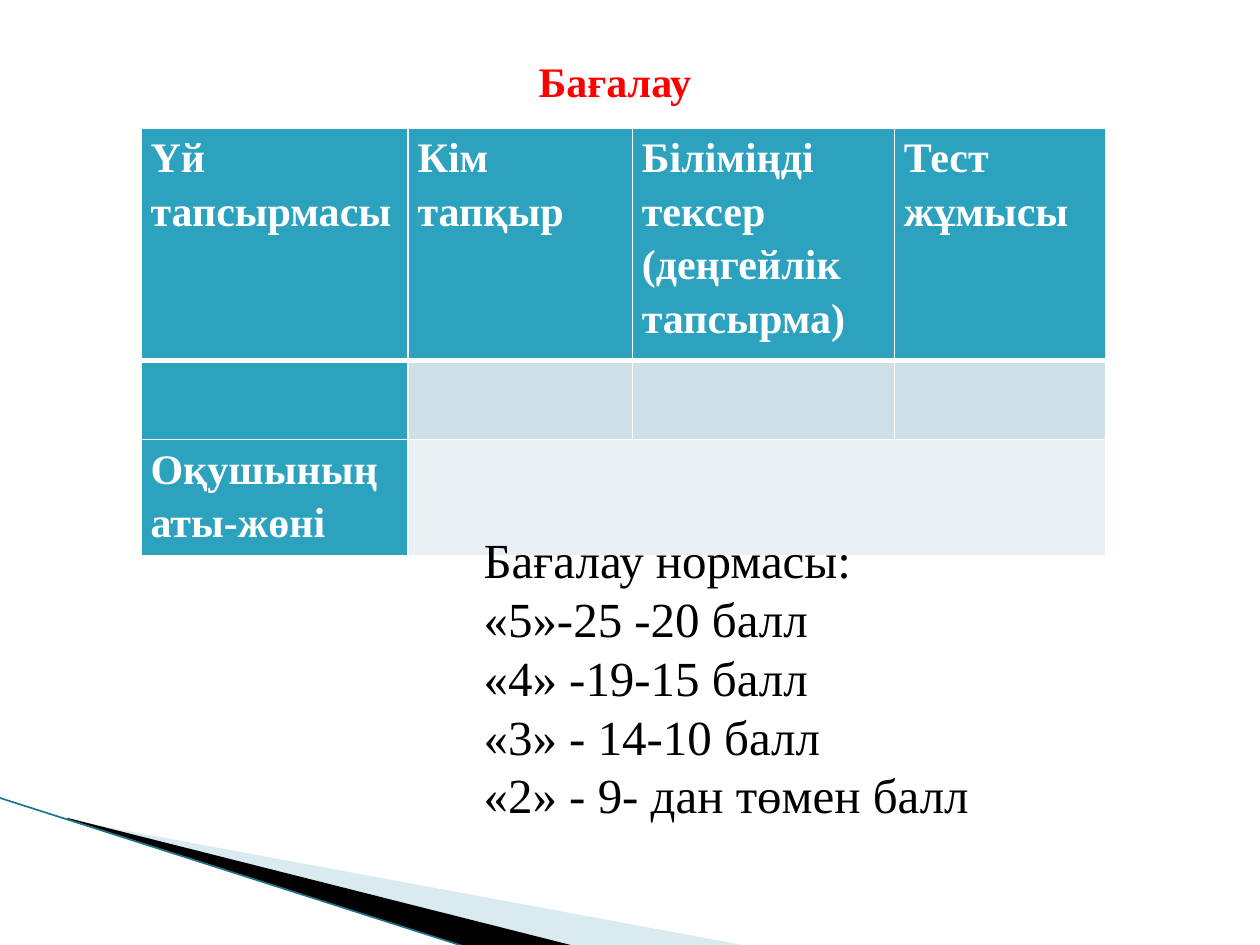
from lxml.etree import SubElement
from pptx import Presentation
from pptx.dml.color import RGBColor
from pptx.enum.shapes import MSO_CONNECTOR
from pptx.enum.text import MSO_ANCHOR, MSO_AUTO_SIZE, PP_ALIGN
from pptx.oxml.ns import qn
from pptx.util import Inches, Pt

# The slide is a grid of 10 columns by 7.5 rows; boxes are (left, top, width, height).
COLUMNS, ROWS = 10, 7.5
CELL = Inches(1)
FONT = "Times New Roman"
COLORS = {
    "title": "FF0000", "text": "000000", "white": "FFFFFF",
    "accent": "2DA2BF", "band": "CDE0E8", "pale": "E8F0F4",
    "wing": "A0CBDC", "wedge": "000000", "edge": "1F7389",
}
HEADERS = ["Үй тапсырмасы", "Кім тапқыр",
           "Біліміңді тексер (деңгейлік тапсырма)", "Тест жұмысы"]
NORMS = ["Бағалау нормасы:", "«5»-25 -20 балл", "«4» -19-15 балл",
         "«3» - 14-10 балл", "«2» - 9- дан төмен балл"]


def grid(*lengths):
    return [round(length * CELL) for length in lengths]


def color(name):
    return RGBColor.from_string(COLORS[name])


def write(frame, lines, size=24, ink="text", bold=False, align=None, spacing=None):
    for index, line in enumerate(lines):
        para = frame.add_paragraph() if index else frame.paragraphs[0]
        para.alignment, para.line_spacing = align, spacing
        span = para.add_run()
        span.text = line
        span.font.name, span.font.size, span.font.bold = FONT, Pt(size), bold
        span.font.color.rgb = color(ink)


def add_text(page, box, lines, wrap=True, **style):
    frame = page.shapes.add_textbox(*grid(*box)).text_frame
    frame.word_wrap = wrap
    frame.vertical_anchor = MSO_ANCHOR.MIDDLE
    frame.auto_size = MSO_AUTO_SIZE.SHAPE_TO_FIT_TEXT
    write(frame, lines, **style)


def set_frame(shape, box):
    """Give a freeform the frame of the box while its outline stays in place."""
    left, top, width, height = grid(*box)
    outline = shape._element.find(".//" + qn("a:path"))
    for point in outline.iter(qn("a:pt")):
        point.set("x", str(int(point.get("x")) + shape.left - left))
        point.set("y", str(int(point.get("y")) + shape.top - top))
    outline.set("w", str(width))
    outline.set("h", str(height))
    shape.left, shape.top, shape.width, shape.height = left, top, width, height


def add_wing(page, box, points, fill, opacity=100):
    builder = page.shapes.build_freeform(*grid(*points[0]), scale=1.0)
    builder.add_line_segments([grid(*point) for point in points[1:]], close=True)
    shape = builder.convert_to_shape()
    set_frame(shape, box)
    shape.shadow.inherit = False
    shape.line.fill.background()
    shape.fill.solid()
    shape.fill.fore_color.rgb = color(fill)
    if opacity < 100:
        tint = shape.fill._xPr.find(".//" + qn("a:srgbClr"))
        SubElement(tint, qn("a:alpha"), val=str(opacity * 1000))


def add_corner(page, box):
    """Draw the wings that sweep from the left edge to the bottom of the box."""
    left, top, _, height = box
    bottom = top + height
    add_wing(page, (left + 0.78, top - 0.86, 4.16, 1.58),
             [(left + 0.55, top + 0.18), (left + 5.95, bottom + 0.01),
              (left + 4.56, bottom + 0.01), (left + 0.55, top + 0.17)], "wing", 40)
    add_wing(page, (left - 0.06, top, 4.16, 0.92),
             [(left + 0.53, top + 0.16), (left + 4.57, bottom + 0.01),
              (left + 3.72, bottom + 0.02), (left + 0.54, top + 0.17)], "wedge")
    edge = page.shapes.add_connector(
        MSO_CONNECTOR.STRAIGHT, *grid(left - 0.01, top, left + 3.71, bottom + 0.02))
    edge.line.color.rgb = color("edge")
    edge.line.width = Pt(0.95)
    SubElement(edge._element.spPr, qn("a:effectLst"))


def set_borders(cell, top, bottom):
    props = cell._tc.get_or_add_tcPr()
    for tag, width in (("lnL", 1), ("lnR", 1), ("lnT", top), ("lnB", bottom)):
        line = SubElement(props, qn("a:" + tag), w=str(Pt(width)))
        fill = SubElement(line, qn("a:solidFill"))
        SubElement(fill, qn("a:srgbClr"), val=COLORS["white"])


def add_score_table(page, box, widths, heights):
    rows = [HEADERS, [""] * len(widths), ["Оқушының аты-жөні", "", "", ""]]
    table = page.shapes.add_table(len(heights), len(widths), *grid(*box)).table
    for column, width in zip(table.columns, grid(*widths)):
        column.width = width
    for row, height in zip(table.rows, grid(*heights)):
        row.height = height
    for r, (texts, body) in enumerate(zip(rows, ("accent", "band", "pale"))):
        for c, text in enumerate(texts):
            cell = table.cell(r, c)
            set_borders(cell, top=3 if r == 1 else 1, bottom=3 if r == 0 else 1)
            cell.fill.solid()
            cell.fill.fore_color.rgb = color(body if c else "accent")
            cell.margin_left = cell.margin_right = Pt(5.4)
            cell.margin_top = cell.margin_bottom = 0
            if text:
                write(cell.text_frame, [text], ink="white", bold=True, spacing=1.15)
    table.cell(2, 1).merge(table.cell(2, 3))


def build_grading_slide(page):
    add_corner(page, (0, 6.33, COLUMNS, ROWS - 6.33))
    add_text(page, (0.23, 0.39, 9.3, 0.5), ["Бағалау"],
             ink="title", bold=True, align=PP_ALIGN.CENTER)
    add_score_table(page, (1.12, 1.02, 7.66, 3.33),
                    widths=(2.12, 1.78, 2.08, 1.68), heights=(1.35, 0.63, 0.9))
    add_text(page, (3.74, 4.14, 4.1, 2.46), NORMS, wrap=False, size=28)


def main():
    deck = Presentation()
    deck.slide_width, deck.slide_height = grid(COLUMNS, ROWS)
    build_grading_slide(deck.slides.add_slide(deck.slide_layouts[6]))
    deck.save("out.pptx")


if __name__ == "__main__":
    main()
